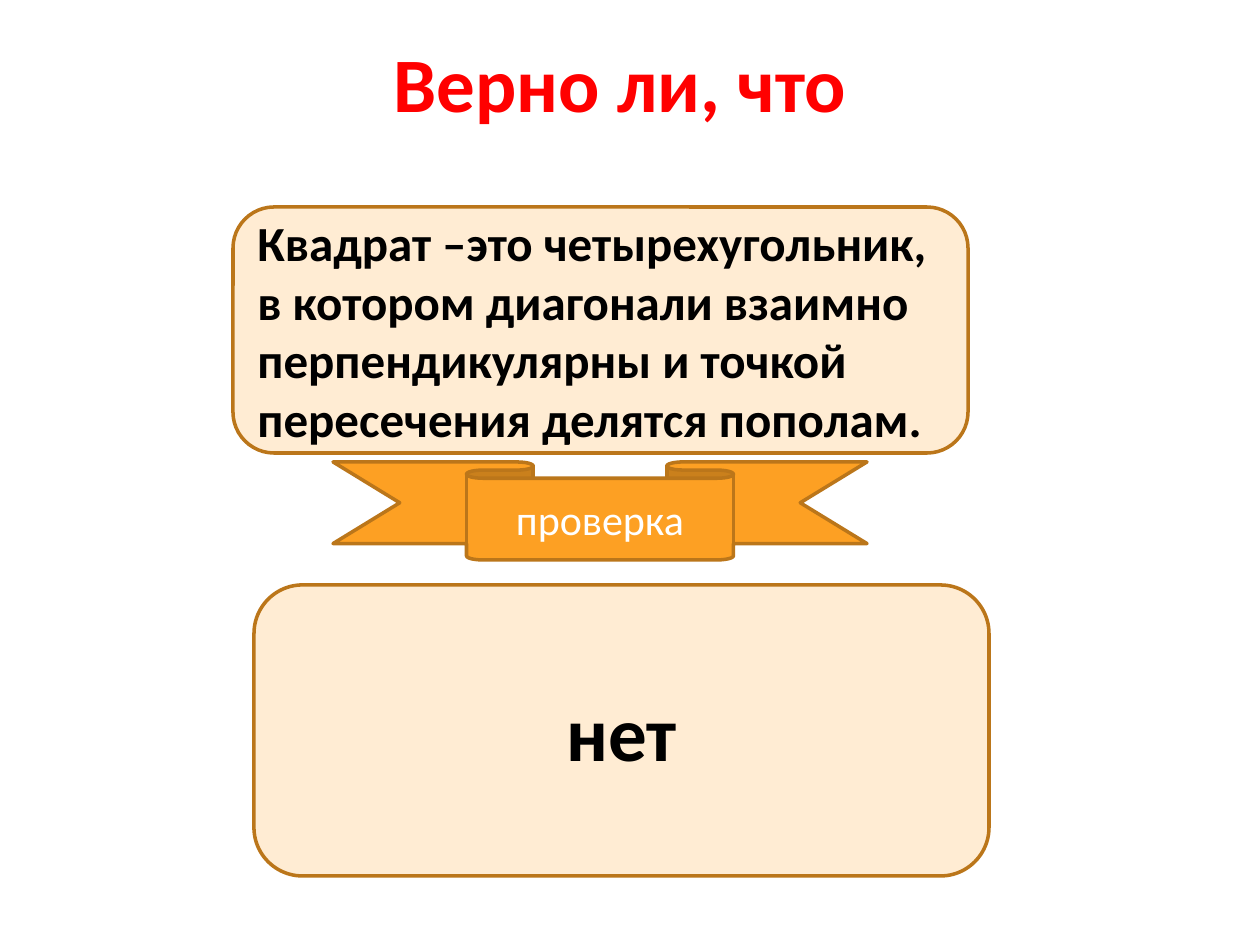
"""Build a true-or-false quiz slide about the square."""
from dataclasses import dataclass

from pptx import Presentation
from pptx import util as u
from pptx.dml.color import RGBColor
from pptx.enum import shapes, text

PX = u.Inches(1) / 126
COLORS = {
    "title": "FF0000",
    "card": "FFECD3",
    "ribbon": "FDA023",
    "outline": "BB761A",
    "dark": "000000",
    "light": "FFFFFF",
}


@dataclass(frozen=True)
class Panel:
    preset: shapes.MSO_SHAPE
    box: tuple[int, int, int, int]
    fill: str
    wording: str
    size: int
    color: str = "dark"
    bold: bool = True
    align: text.PP_ALIGN = text.PP_ALIGN.CENTER


PANELS = [
    Panel(shapes.MSO_SHAPE.DOWN_RIBBON, (333, 462, 534, 98), "ribbon",
          "проверка", 24, color="light", bold=False),
    Panel(shapes.MSO_SHAPE.ROUNDED_RECTANGLE, (233, 207, 735, 246), "card",
          "Квадрат –это четырехугольник, в котором диагонали взаимно "
          "перпендикулярны и точкой пересечения делятся пополам.",
          28, align=text.PP_ALIGN.LEFT),
    Panel(shapes.MSO_SHAPE.ROUNDED_RECTANGLE, (254, 585, 735, 291), "card",
          "нет", 44),
]


def px(*lengths: int) -> list[u.Emu]:
    return [u.Emu(round(length * PX)) for length in lengths]


def rgb(name: str) -> RGBColor:
    return RGBColor.from_string(COLORS[name])


def write(frame, wording: str, *, size: int, color: str, bold: bool = True,
          align=text.PP_ALIGN.CENTER, anchor=text.MSO_ANCHOR.MIDDLE) -> None:
    frame.word_wrap = True
    frame.vertical_anchor = anchor
    paragraph = frame.paragraphs[0]
    paragraph.alignment = align
    run = paragraph.add_run()
    run.text = wording
    run.font.name = "Calibri"
    run.font.size = u.Pt(size)
    run.font.bold = bold
    run.font.color.rgb = rgb(color)


def draw_panel(slide, panel: Panel) -> None:
    body = slide.shapes.add_shape(panel.preset, *px(*panel.box))
    body.shadow.inherit = False
    body.fill.solid()
    body.fill.fore_color.rgb = rgb(panel.fill)
    body.line.color.rgb = rgb("outline")
    body.line.width = u.Pt(2)
    write(body.text_frame, panel.wording, size=panel.size, color=panel.color,
          bold=panel.bold, align=panel.align)


def main() -> None:
    deck = Presentation()
    deck.slide_width, deck.slide_height = px(1260, 945)
    slide = deck.slides.add_slide(deck.slide_layouts[6])
    for panel in PANELS:
        draw_panel(slide, panel)
    title = slide.shapes.add_textbox(*px(364, 29, 512, 106)).text_frame
    write(title, "Верно ли, что", size=44, color="title",
          anchor=text.MSO_ANCHOR.TOP)
    title.auto_size = text.MSO_AUTO_SIZE.SHAPE_TO_FIT_TEXT
    deck.save("out.pptx")


if __name__ == "__main__":
    main()
